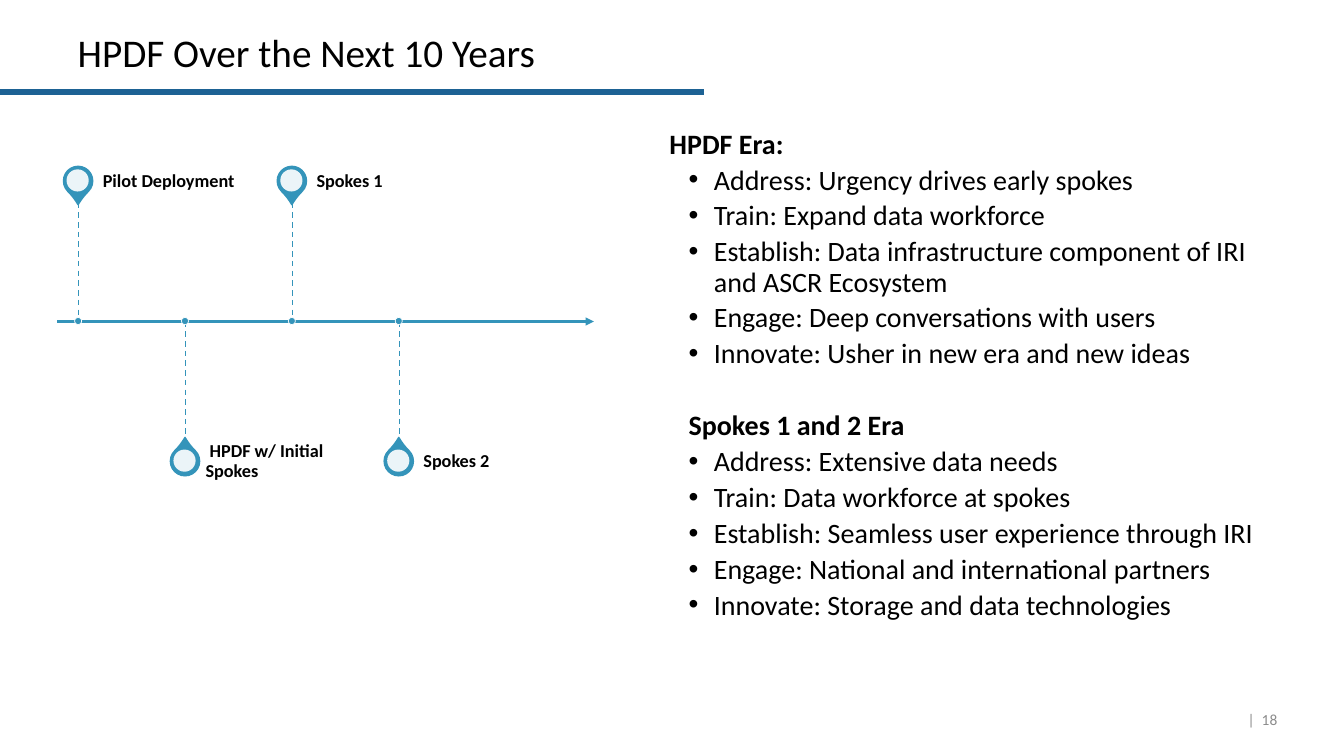
import lxml.etree
import pptx
import pptx.dml.color
import pptx.enum.dml
import pptx.enum.shapes
import pptx.enum.text
import pptx.oxml.ns
import pptx.util

EMU_PER_PX = 9144  # 100 px to the inch
FONT = "Calibri"
COLORS = {
    "text": "000000",
    "muted": "8C8C8C",
    "rule": "1D6294",
    "accent": "3494BA",
    "white": "FFFFFF",
}
ALIGN = pptx.enum.text.PP_ALIGN
ANCHOR = pptx.enum.text.MSO_ANCHOR
SHAPE = pptx.enum.shapes.MSO_SHAPE

# Timeline geometry
AXIS_Y = 319
FIRST_X, STEP_X = 78, 106
LABEL_TOP_ABOVE, LABEL_TOP_BELOW = 159, 437
LABEL_HEIGHT = 42
MILESTONES = ["Pilot Deployment", "HPDF w/ Initial Spokes", "Spokes 1", "Spokes 2"]

# Heading, left margin in px, space before in points, bullets
ERAS = [
    ("HPDF Era:", 6, 0, [
        "Address: Urgency drives early spokes",
        "Train: Expand data workforce",
        "Establish: Data infrastructure component of IRI and ASCR Ecosystem",
        "Engage: Deep conversations with users",
        "Innovate: Usher in new era and new ideas",
    ]),
    ("Spokes 1 and 2 Era", 25, 30, [
        "Address: Extensive data needs",
        "Train: Data workforce at spokes",
        "Establish: Seamless user experience through IRI",
        "Engage: National and international partners",
        "Innovate: Storage and data technologies",
    ]),
]


def px(value):
    return pptx.util.Emu(value * EMU_PER_PX)


def rgb(name):
    return pptx.dml.color.RGBColor.from_string(COLORS[name])


def add_element(parent, tag, **attributes):
    return lxml.etree.SubElement(parent, pptx.oxml.ns.qn(tag), **attributes)


def place(box, left, top, width, height):
    box.left, box.top, box.width, box.height = map(px, (left, top, width, height))


def set_frame(box, anchor, insets=(10, 5, 10, 5)):
    frame = box.text_frame
    frame.word_wrap = True
    frame.auto_size = pptx.enum.text.MSO_AUTO_SIZE.NONE
    frame.vertical_anchor = anchor
    (frame.margin_left, frame.margin_top,
     frame.margin_right, frame.margin_bottom) = map(px, insets)
    return frame


def set_indent(para, margin, first_line, bullet=None):
    properties = para._p.get_or_add_pPr()
    properties.set("marL", str(px(margin)))
    properties.set("indent", str(px(first_line)))
    if bullet:
        add_element(properties, "a:buFont", typeface="Arial")
        add_element(properties, "a:buChar", char=bullet)
    else:
        add_element(properties, "a:buNone")


def write(para, text, size, color="text", bold=False, align=ALIGN.LEFT, before=0):
    para.alignment = align
    para.line_spacing = 0.9
    para.space_before = pptx.util.Pt(before)
    span = para.add_run()
    span.text = text
    span.font.name = FONT
    span.font.size = pptx.util.Pt(size)
    span.font.bold = bold
    span.font.color.rgb = rgb(color)


def add_line(shapes, start, end, color, weight, dashed=False, arrow=False):
    line = shapes.add_connector(
        pptx.enum.shapes.MSO_CONNECTOR.STRAIGHT, *map(px, start + end))
    line.line.color.rgb = rgb(color)
    line.line.width = pptx.util.Pt(weight)
    if dashed:
        line.line.dash_style = pptx.enum.dml.MSO_LINE.DASH
    properties = line._element.spPr
    if arrow:
        add_element(properties.find(pptx.oxml.ns.qn("a:ln")), "a:tailEnd", type="triangle")
    add_element(properties, "a:effectLst")


def add_solid(shapes, kind, left, top, size, fill, outline=None, weight=1):
    solid = shapes.add_shape(kind, *map(px, (left, top, size, size)))
    solid.shadow.inherit = False
    solid.fill.solid()
    solid.fill.fore_color.rgb = rgb(fill)
    if outline:
        solid.line.color.rgb = rgb(outline)
        solid.line.width = pptx.util.Pt(weight)
    else:
        solid.line.fill.background()
    return solid


def add_milestone(shapes, x, label, above):
    top = LABEL_TOP_ABOVE if above else LABEL_TOP_BELOW
    # Pin with a pale centre
    pin = add_solid(shapes, SHAPE.TEAR, x - 15, top + 6, 29, "accent", "accent")
    pin.adjustments[0] = 1.15
    pin.rotation = 135 if above else 315
    hole = add_solid(shapes, SHAPE.OVAL, x - 12, top + 9, 22, "white")
    tint = hole._element.spPr.find(".//" + pptx.oxml.ns.qn("a:srgbClr"))
    add_element(tint, "a:alpha", val="90000")
    # Label
    box = shapes.add_textbox(*map(px, (x + 20, top, 173, LABEL_HEIGHT)))
    para = set_frame(box, ANCHOR.MIDDLE, (0, 0, 9, 0)).paragraphs[0]
    set_indent(para, 0, 4)
    write(para, label, 13, bold=True)
    # Stem and axis dot
    pin_end = top + LABEL_HEIGHT if above else top
    add_line(shapes, (x, min(pin_end, AXIS_Y)), (x, max(pin_end, AXIS_Y)),
             "accent", 1, dashed=True)
    add_solid(shapes, SHAPE.OVAL, x - 4, AXIS_Y - 4, 7, "accent", "white", 0.5)


def add_timeline(page):
    shapes = page.shapes.add_group_shape().shapes
    add_line(shapes, (57, AXIS_Y), (589, AXIS_Y), "accent", 1.5, arrow=True)
    for index, label in enumerate(MILESTONES):
        add_milestone(shapes, FIRST_X + index * STEP_X, label, above=index % 2 == 0)


def fill_title(box):
    place(box, 67, 28, 1100, 52)
    frame = set_frame(box, ANCHOR.BOTTOM)
    write(frame.paragraphs[0], "HPDF Over the Next 10 Years", 28)


def fill_eras(box):
    place(box, 648, 124, 618, 518)
    frame = set_frame(box, ANCHOR.TOP)
    for index, (heading, margin, before, bullets) in enumerate(ERAS):
        para = frame.add_paragraph() if index else frame.paragraphs[0]
        set_indent(para, margin, 0)
        write(para, heading, 20, bold=True, before=before)
        for text in bullets:
            para = frame.add_paragraph()
            para.level = 1
            set_indent(para, 50, -25, "•")
            write(para, text, 20, before=4)


def add_page_number(page):
    box = page.shapes.add_textbox(*map(px, (1225, 695, 42, 40)))
    frame = set_frame(box, ANCHOR.MIDDLE, (0, 5, 0, 5))
    write(frame.paragraphs[0], "|  18", 11, "muted", align=ALIGN.RIGHT)


def main():
    deck = pptx.Presentation()
    deck.slide_width, deck.slide_height = px(1333), px(750)
    page = deck.slides.add_slide(deck.slide_layouts[1])
    add_line(page.shapes, (0, 91), (698, 91), "rule", 4.5)
    fill_title(page.shapes.title)
    fill_eras(page.placeholders[1])
    add_page_number(page)
    add_timeline(page)
    deck.save("out.pptx")


if __name__ == "__main__":
    main()
